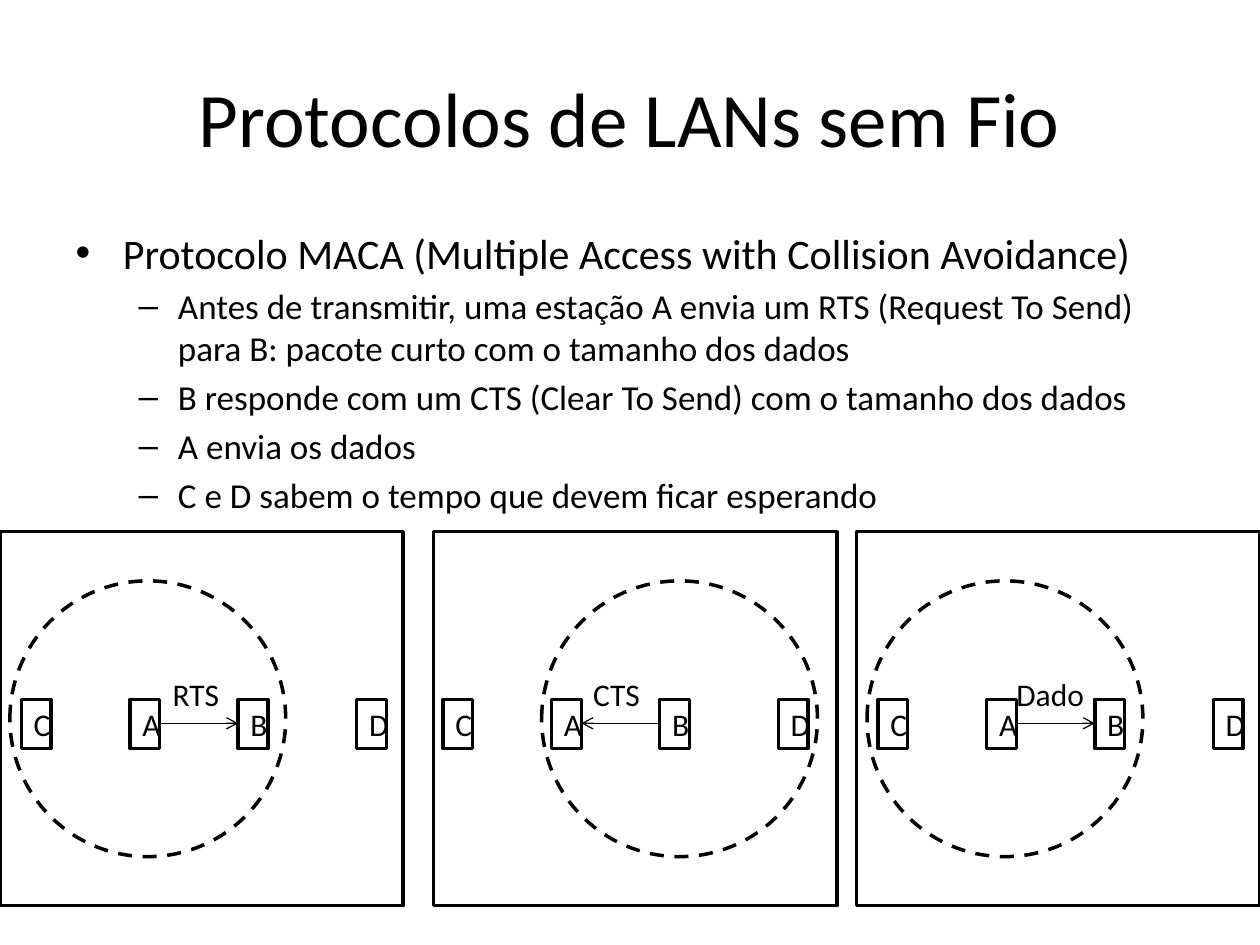
from dataclasses import dataclass

from lxml import etree
from pptx import Presentation
from pptx import util as u
from pptx.dml.color import RGBColor
from pptx.enum import dml, shapes, text
from pptx.oxml import ns


@dataclass(frozen=True)
class Theme:
    font: str = "Calibri"
    ink: RGBColor = RGBColor(0, 0, 0)
    paper: RGBColor = RGBColor(255, 255, 255)
    title: float = 44
    bullet: float = 24
    sub_bullet: float = 20
    label: float = 18
    outline: float = 2
    arrow: float = 0.75


theme = Theme()
Cm = u.Cm


def format_runs(p, size):
    for r in p.runs:
        r.font.name = theme.font
        r.font.size = u.Pt(size)
        r.font.color.rgb = theme.ink


def add_outlined(s, kind, x, y, w, h, filled=True):
    sp = s.shapes.add_shape(kind, Cm(x), Cm(y), Cm(w), Cm(h))
    sp.shadow.inherit = False
    if filled:
        sp.fill.solid()
        sp.fill.fore_color.rgb = theme.paper
    else:
        sp.fill.background()
    sp.line.color.rgb = theme.ink
    sp.line.width = u.Pt(theme.outline)
    return sp


prs = Presentation()
prs.slide_width, prs.slide_height = Cm(25.4), Cm(19.05)
s = prs.slides.add_slide(prs.slide_layouts[1])

title, body = s.placeholders
title.left, title.top, title.width, title.height = Cm(1.27), Cm(0.76), Cm(22.86), Cm(3.18)
title.text_frame.text = "Protocolos de LANs sem Fio"
format_runs(title.text_frame.paragraphs[0], theme.title)

body.left, body.top, body.width, body.height = Cm(1.27), Cm(4.45), Cm(22.86), Cm(12.57)
bullets = [
    "Protocolo MACA (Multiple Access with Collision Avoidance)",
    "Antes de transmitir, uma estação A envia um RTS (Request To Send) para B: "
    "pacote curto com o tamanho dos dados",
    "B responde com um CTS (Clear To Send) com o tamanho dos dados",
    "A envia os dados",
    "C e D sabem o tempo que devem ficar esperando",
]
tf = body.text_frame
tf.text = "\n".join(bullets)
for i, p in enumerate(tf.paragraphs):
    p.level = 1 if i else 0
    format_runs(p, theme.sub_bullet if i else theme.bullet)

panel_w, panel_h, panel_y = 8.13, 7.54, 10.72
station_w, station_h, station_y = 0.6, 0.99, 14.1
range_d, range_y = 5.56, 11.71
arrow_y, label_y, label_h = 14.58, 13.49, 1.02
stations = {"A": 2.62, "B": 4.8, "C": 0.43, "D": 7.19}

# panel x, stations x, range x, label, label x, label width, arrow end
panels = [
    (0, 0, 0.2, "RTS", 3.23, 1.6, "a:tailEnd"),
    (8.74, 8.5, 10.92, "CTS", 11.71, 1.6, "a:headEnd"),
    (17.27, 17.27, 17.48, "Dado", 20.24, 2.18, "a:tailEnd"),
]

for panel_x, origin, range_x, message, label_x, label_w, arrow_end in panels:
    add_outlined(s, shapes.MSO_SHAPE.RECTANGLE, panel_x, panel_y, panel_w, panel_h)

    for name, offset in stations.items():
        sp = add_outlined(s, shapes.MSO_SHAPE.RECTANGLE,
                          origin + offset, station_y, station_w, station_h)
        tf = sp.text_frame
        tf.text = name
        tf.vertical_anchor = text.MSO_ANCHOR.MIDDLE
        p = tf.paragraphs[0]
        p.alignment = text.PP_ALIGN.CENTER
        format_runs(p, theme.label)

    sp = add_outlined(s, shapes.MSO_SHAPE.OVAL, range_x, range_y, range_d, range_d, filled=False)
    sp.line.dash_style = dml.MSO_LINE.DASH

    arrow = s.shapes.add_connector(
        shapes.MSO_CONNECTOR.STRAIGHT,
        Cm(origin + stations["A"] + station_w), Cm(arrow_y),
        Cm(origin + stations["B"]), Cm(arrow_y))
    arrow.line.color.rgb = theme.ink
    arrow.line.width = u.Pt(theme.arrow)
    etree.SubElement(arrow.line._get_or_add_ln(), ns.qn(arrow_end), type="arrow")
    etree.SubElement(arrow._element.spPr, ns.qn("a:effectLst"))

    sp = s.shapes.add_textbox(Cm(label_x), Cm(label_y), Cm(label_w), Cm(label_h))
    tf = sp.text_frame
    tf.word_wrap = False
    tf.auto_size = text.MSO_AUTO_SIZE.SHAPE_TO_FIT_TEXT
    tf.text = message
    format_runs(tf.paragraphs[0], theme.label)

prs.save("out.pptx")
